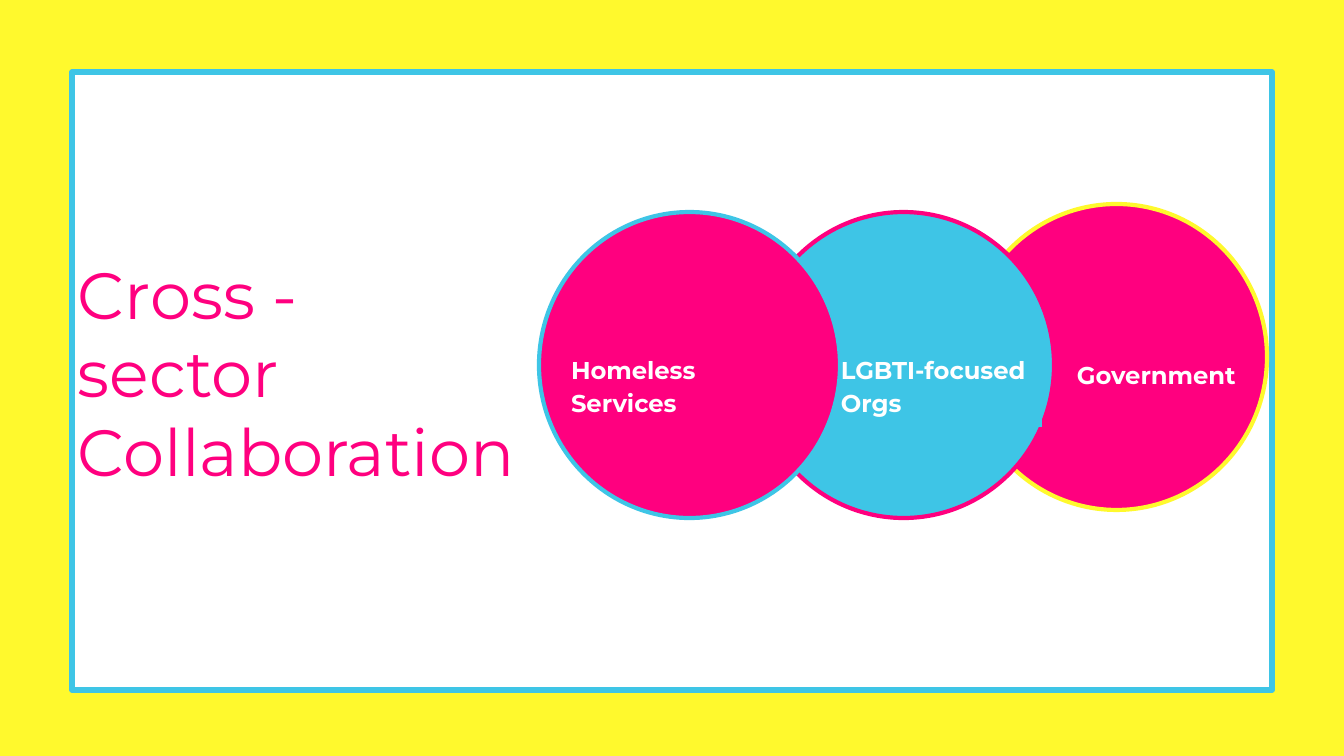
from dataclasses import dataclass

from pptx import Presentation
from pptx.dml.color import RGBColor
from pptx.enum.shapes import MSO_SHAPE as Shape
from pptx.enum.text import MSO_ANCHOR as Anchor, MSO_AUTO_SIZE as AutoSize, PP_ALIGN as Align
from pptx.util import Emu, Pt

PX = 914400 / 134.4  # EMU in one px


@dataclass(frozen=True)
class Theme:
    yellow: str = "FFF92D"
    blue: str = "3EC5E6"
    pink: str = "FF007F"
    white: str = "FFFFFF"
    font: str = "Montserrat"
    title_size: int = 35
    label_size: int = 13


THEME = Theme()


def px(length):
    return Emu(round(length * PX))


def color(code):
    return RGBColor.from_string(code)


def write_text(box, lines, size, ink, bold=False, spacing=None):
    frame = box.text_frame
    frame.word_wrap = True
    frame.auto_size = AutoSize.NONE
    frame.vertical_anchor = Anchor.MIDDLE
    frame.margin_left = frame.margin_right = px(13)
    frame.margin_top = frame.margin_bottom = px(13)
    for index, line in enumerate(lines):
        para = frame.paragraphs[0] if index == 0 else frame.add_paragraph()
        para.alignment = Align.LEFT
        para.line_spacing = spacing
        span = para.add_run()
        span.text = line
        span.font.name = THEME.font
        span.font.size = Pt(size)
        span.font.bold = bold
        span.font.color.rgb = color(ink)


def add_filled(shapes, kind, bounds, fill, line=None, weight=0):
    shape = shapes.add_shape(kind, *map(px, bounds))
    shape.shadow.inherit = False
    shape.fill.solid()
    shape.fill.fore_color.rgb = color(fill)
    if line:
        shape.line.color.rgb = color(line)
        shape.line.width = Pt(weight)
    else:
        shape.line.fill.background()
    return shape


def add_title(page, lines, bounds):
    title = page.shapes.title
    title.left, title.top, title.width, title.height = map(px, bounds)
    write_text(title, lines, THEME.title_size, THEME.pink)


def add_sector(page, name, left, top, fill, line, label, plate=True):
    """A circle with its label, on a plate of the circle's colour if asked."""
    shapes = page.shapes.add_group_shape().shapes
    add_filled(shapes, Shape.OVAL, (left, top, 301, 306), fill, line, 2.25)
    if plate:
        box = add_filled(shapes, Shape.RECTANGLE, label, fill)
    else:
        box = shapes.add_textbox(*map(px, label))
    write_text(box, [name], THEME.label_size, THEME.white, bold=True, spacing=1.15)


def main():
    deck = Presentation()
    deck.slide_width, deck.slide_height = px(1344), px(756)
    page = deck.slides.add_slide(deck.slide_layouts[5])

    # Background and framed panel
    page.background.fill.solid()
    page.background.fill.fore_color.rgb = color(THEME.yellow)
    panel = add_filled(page.shapes, Shape.RECTANGLE, (72, 72, 1200, 618),
                       THEME.white, THEME.blue, 3)
    # The panel goes behind the title
    page.shapes.title.element.addprevious(panel.element)

    add_title(page, ["Cross -", "sector Collaboration"], (65, 71, 536, 601))

    # Overlapping sectors, from back to front
    add_sector(page, "Government", 966, 204, THEME.pink, THEME.yellow,
               (1064, 327, 200, 91), plate=False)
    add_sector(page, "LGBTI-focused Orgs", 753, 212, THEME.blue, THEME.pink,
               (828, 341, 214, 86))
    add_sector(page, "Homeless Services", 539, 212, THEME.pink, THEME.blue,
               (558, 341, 212, 86))

    deck.save("out.pptx")


if __name__ == "__main__":
    main()
